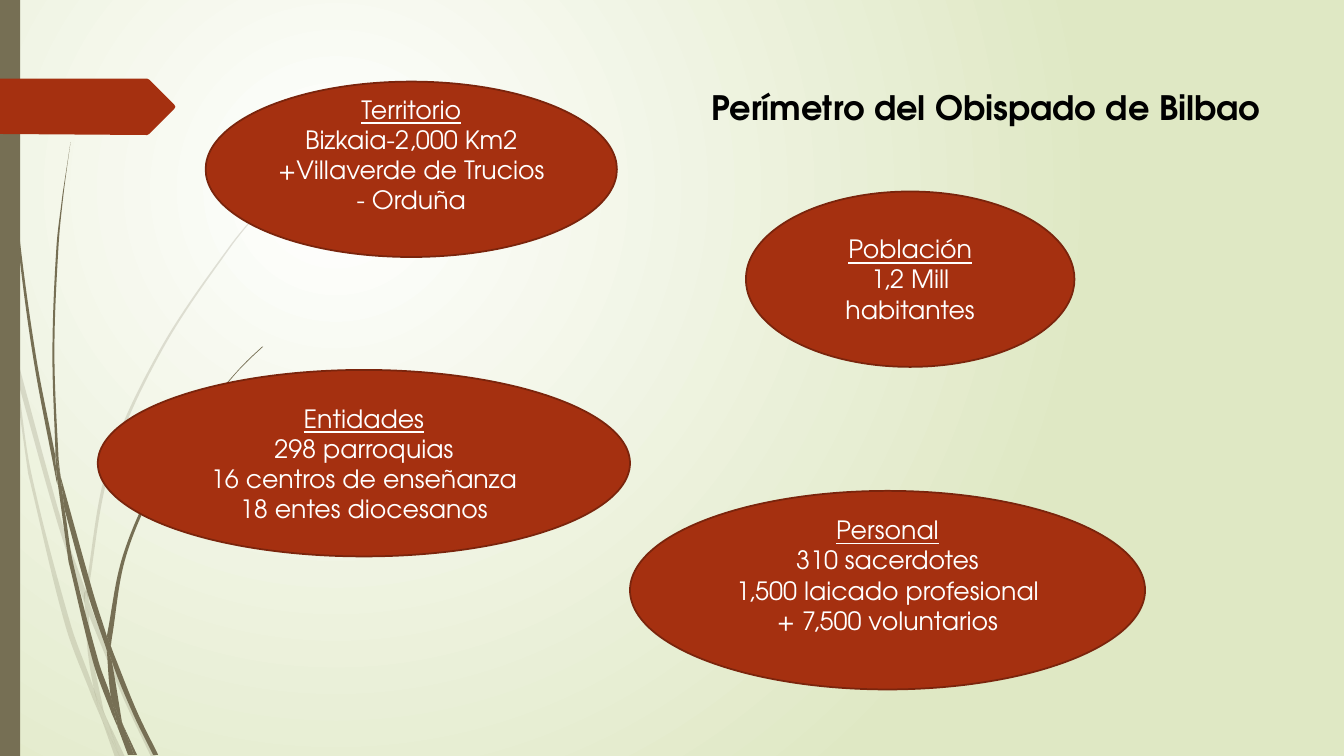
from math import dist

from lxml import etree
from pptx import Presentation
from pptx.dml.color import RGBColor
from pptx.enum.shapes import MSO_SHAPE
from pptx.enum.text import MSO_ANCHOR, MSO_AUTO_SIZE, PP_ALIGN
from pptx.oxml.ns import qn
from pptx.util import Pt

OVAL = MSO_SHAPE.OVAL
RECTANGLE = MSO_SHAPE.RECTANGLE
MIDDLE = MSO_ANCHOR.MIDDLE
CENTER = PP_ALIGN.CENTER
FIT_SHAPE = MSO_AUTO_SIZE.SHAPE_TO_FIT_TEXT

FONT = "TeX Gyre Adventor"
COLORS = {
    "white": "FFFFFF",
    "black": "000000",
    "green": "DFE8C4",
    "olive": "766F54",
    "red": "A53010",
    "dark_red": "7A240C",
}
GRID = Pt(0.72)

PALE_BLADES = [
    ([(11, 350), (9, 322), (0, 282)], [(0, 299), (10, 344), (11, 350)]),
    ([(17, 376), (58, 522), (84, 599)], [(85, 586), (62, 520), (14, 345)]),
    ([(88, 610), (123, 694), (150, 751)], [(155, 751), (127, 692), (92, 607), (88, 596)]),
    ([(105, 711), (119, 751)], [(124, 751)]),
    ([(101, 714), (99, 707), (93, 683), (70, 619), (31, 469), (17, 376), (11, 350)],
     [(28, 470), (65, 621), (92, 693)]),
    ([(84, 599), (87, 646), (93, 683), (96, 692), (105, 711)],
     [(103, 706), (91, 646), (88, 610), (88, 608)]),
    ([(88, 596), (88, 584), (110, 462), (160, 349), (229, 245), (268, 198), (290, 175), (312, 154)],
     [(312, 153), (289, 175), (268, 197), (228, 244), (158, 348), (107, 461), (85, 584), (85, 586)]),
    ([(101, 714), (114, 751)], [(119, 751)]),
    ([(88, 608), (88, 610)], [(88, 596), (85, 586), (84, 599)]),
    ([(119, 751), (105, 711), (96, 692), (93, 683)], [(99, 707), (101, 714)]),
]
DARK_BLADES = [
    ([(3, 0), (4, 48), (7, 110), (17, 233), (33, 355), (56, 477), (57, 481)],
     [(55, 457), (55, 453), (36, 355), (19, 232), (8, 109), (5, 48), (4, 0)]),
    ([(64, 505), (88, 592), (106, 645)], [(106, 633), (106, 631), (93, 590), (60, 472)]),
    ([(110, 641), (111, 656), (132, 708), (152, 749)],
     [(157, 749), (136, 706), (113, 649)]),
    ([(117, 722), (116, 717), (110, 691), (98, 657), (72, 556), (64, 505), (57, 477)],
     [(68, 557), (93, 659), (111, 708)]),
    ([(60, 472), (58, 453), (54, 349), (58, 245), (63, 193), (70, 141)],
     [(62, 193), (56, 245), (52, 349), (55, 449)]),
    ([(122, 719), (133, 749)], [(136, 749)]),
    ([(55, 449), (55, 453), (57, 477), (64, 505)], [(60, 472)]),
    ([(110, 641), (111, 633), (125, 552), (158, 476), (205, 406), (231, 374), (245, 359), (261, 344)],
     [(260, 344), (245, 358), (231, 373), (204, 405), (156, 474), (122, 551), (106, 631)]),
    ([(117, 722), (127, 749)], [(131, 749)]),
    ([(106, 645), (110, 691), (116, 706), (122, 719)], [(121, 716), (111, 656), (109, 651)]),
    ([(106, 631), (110, 641), (111, 656)], [(109, 651), (106, 645), (106, 633)]),
    ([(110, 691), (116, 717), (117, 722), (130, 749)],
     [(133, 749), (122, 719), (116, 706)]),
]
ARROW = [(0, 78), (146, 78), (148, 79), (173, 104), (174, 106),
         (173, 108), (148, 133), (146, 134), (0, 133)]

OVALS = [
    ((146.88, 58.32, 293.76, 125.28), 24.8,
     ["Territorio", "Bizkaia-2,000 Km2", "+Villaverde de Trucios", "- Orduña"]),
    ((532.8, 136.8, 234.72, 125.28), 3.9, ["Población", "1,2 Mill habitantes"]),
    ((69.84, 264.24, 380.16, 133.2), 3.4,
     ["Entidades", "298 parroquias", "16 centros de enseñanza", "18 entes diocesanos"]),
    ((450, 350.64, 367.92, 141.84), 25.4,
     ["Personal", "310 sacerdotes", "1,500 laicado profesional", "+ 7,500 voluntarios"]),
]


def rgb(name):
    return RGBColor.from_string(COLORS[name])


def paint(sp, color, line=None):
    sp.shadow.inherit = False
    sp.fill.solid()
    sp.fill.fore_color.rgb = rgb(color)
    if line:
        sp.line.color.rgb = rgb(line)
        sp.line.width = Pt(1.25)
    else:
        sp.line.fill.background()


def set_background(slide):
    fill = slide.background.fill
    fill.gradient()
    for stop, position, color in zip(fill.gradient_stops, (0, 1), ("white", "green")):
        stop.position = position
        stop.color.rgb = rgb(color)
    lin = next(slide.element.iter(qn("a:lin")))
    radial = etree.Element(qn("a:path"), path="circle")
    etree.SubElement(radial, qn("a:fillToRect"), l="50000", t="50000", r="100000", b="100000")
    lin.getparent().replace(lin, radial)


def add_outline(shapes, points, color):
    corners = [(x * GRID, y * GRID) for x, y in points]
    builder = shapes.build_freeform(*corners[0], scale=1.0)
    builder.add_line_segments(corners[1:], close=True)
    sp = builder.convert_to_shape()
    paint(sp, color)
    return sp


def handle(knot, other, before, after):
    span = dist(before, after)
    reach = dist(knot, other) / span / 3 if span else 0
    return tuple(k + reach * (a - b) for k, a, b in zip(knot, after, before))


def curve_handles(side):
    padded = [side[0], *side, side[-1]]
    return [(handle(b, c, a, c), handle(c, b, d, b))
            for a, b, c, d in zip(padded, padded[1:], padded[2:], padded[3:])]


def bend(sp, sides):
    left, right = map(curve_handles, sides)
    segments = list(sp.element.iter(qn("a:lnTo")))
    for segment, handles in zip(segments, [*left, None, *right]):
        if handles:
            segment.tag = qn("a:cubicBezTo")
            for i, (x, y) in enumerate(handles):
                pt = etree.Element(qn("a:pt"), x=str(round(x * GRID - sp.left)),
                                   y=str(round(y * GRID - sp.top)))
                segment.insert(i, pt)


def add_grass(slide, blades, opacity=100):
    group = slide.shapes.add_group_shape()
    for left_side, right_side in blades:
        sp = add_outline(group.shapes, left_side + right_side, "olive")
        bend(sp, (left_side, right_side))
        if opacity < 100:
            color = next(sp.element.iter(qn("a:srgbClr")))
            etree.SubElement(color, qn("a:alpha"), val=str(opacity * 1000))


def add_run(p, text, size, color, bold=False, underline=False):
    r = p.add_run()
    r.text = text
    r.font.name = FONT
    r.font.size = Pt(size)
    r.font.bold = bold
    r.font.underline = underline
    r.font.color.rgb = rgb(color)


def add_oval(slide, box, bottom, lines):
    sp = slide.shapes.add_shape(OVAL, *map(Pt, box))
    paint(sp, "red", "dark_red")
    tf = sp.text_frame
    tf.word_wrap = True
    tf.vertical_anchor = MIDDLE
    tf.margin_bottom = Pt(bottom)
    for i, line in enumerate(lines):
        p = tf.add_paragraph() if i else tf.paragraphs[0]
        p.alignment = CENTER
        add_run(p, line, 18, "white", underline=i == 0)


def add_title(slide, text):
    sp = slide.shapes.add_textbox(Pt(501.1), Pt(58.3), Pt(427.7), Pt(36))
    tf = sp.text_frame
    tf.word_wrap = False
    tf.auto_size = FIT_SHAPE
    add_run(tf.paragraphs[0], text, 24, "black", bold=True)


def main():
    prs = Presentation()
    prs.slide_width, prs.slide_height = Pt(960), Pt(540)
    slide = prs.slides.add_slide(prs.slide_layouts[6])
    set_background(slide)
    add_grass(slide, PALE_BLADES, opacity=20)
    add_grass(slide, DARK_BLADES)
    side_bar = slide.shapes.add_shape(RECTANGLE, 0, 0, Pt(14.4), Pt(540))
    paint(side_bar, "olive")
    add_outline(slide.shapes, ARROW, "red")
    for box, bottom, lines in OVALS:
        add_oval(slide, box, bottom, lines)
    add_title(slide, "Perímetro del Obispado de Bilbao")
    prs.save("out.pptx")


if __name__ == "__main__":
    main()
